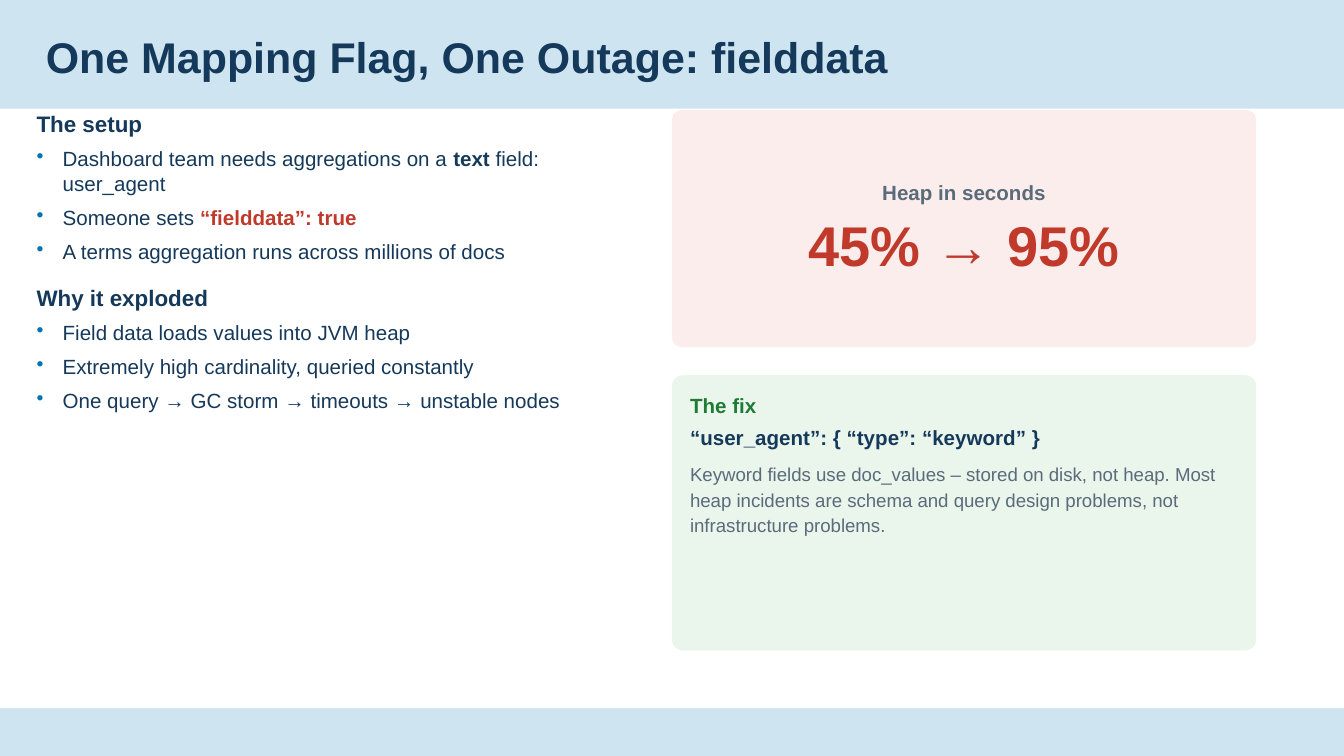
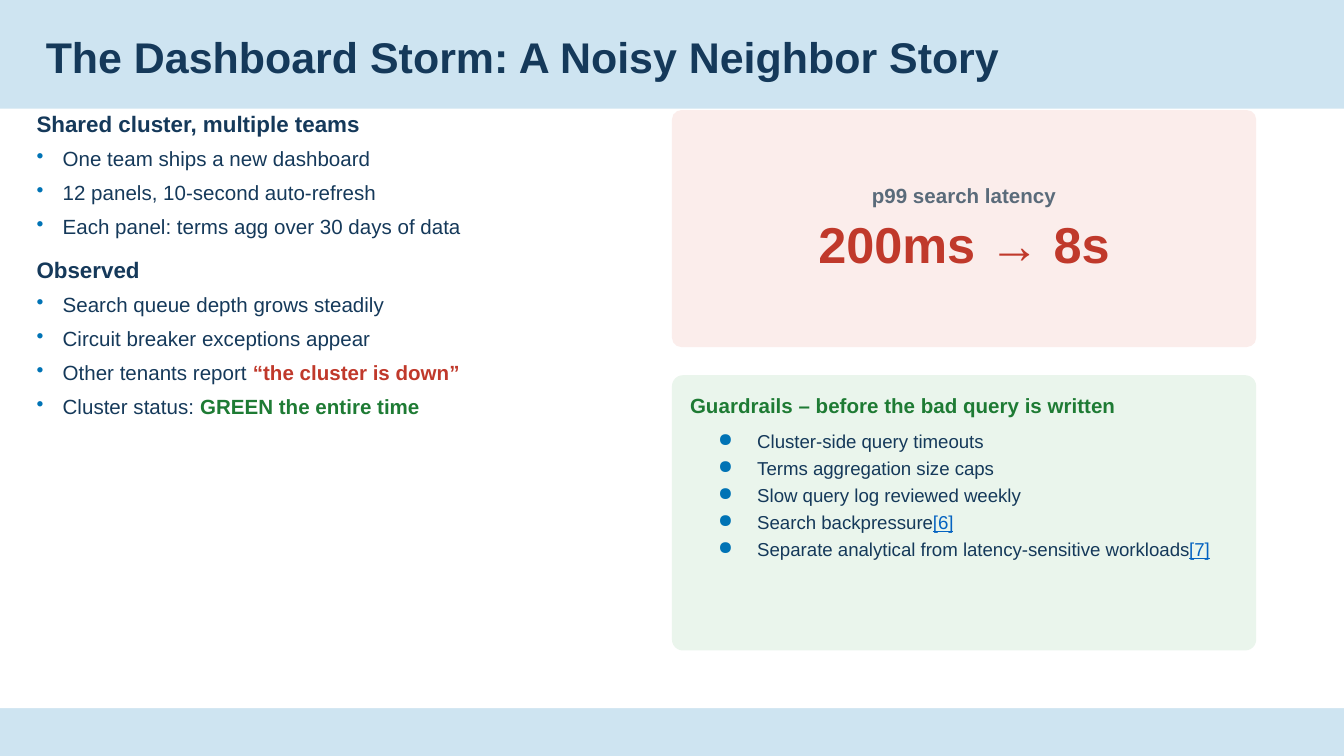
import pptx
import pptx.util
import pptx.dml.color
import pptx.enum.shapes
import pptx.enum.text
import pptx.oxml
import pptx.oxml.ns

Pt = pptx.util.Pt
RGB = pptx.dml.color.RGBColor
SHAPE = pptx.enum.shapes.MSO_SHAPE
ALIGN = pptx.enum.text.PP_ALIGN
ANCHOR = pptx.enum.text.MSO_ANCHOR

FONT = "Arial"
SKY = RGB(0xCE, 0xE4, 0xF1)
WHITE = RGB(0xFF, 0xFF, 0xFF)
NAVY = RGB(0x15, 0x39, 0x5A)
BLUE = RGB(0x00, 0x73, 0xB5)
RED = RGB(0xC0, 0x39, 0x2B)
GREEN = RGB(0x1E, 0x7B, 0x34)
GREY = RGB(0x5A, 0x6B, 0x7A)
LINK = RGB(0x05, 0x63, 0xC1)
ROSE = RGB(0xFB, 0xED, 0xEB)
MINT = RGB(0xEA, 0xF5, 0xEC)

# A line is a string or a list of runs; a run is a string or (text, format).
STRONG = {"bold": True}
ALERT = {"bold": True, "color": RED}
CALM = {"bold": True, "color": GREEN}
CITE = {"color": LINK, "line": True}

SLIDES = [
    {
        "title": "One Mapping Flag, One Outage: fielddata",
        "gap": 11,
        "story": [
            ("The setup", [
                ["Dashboard team needs aggregations on a ", ("text", STRONG),
                 " field: user_agent"],
                ["Someone sets ", ("“fielddata”: true", ALERT)],
                "A terms aggregation runs across millions of docs",
            ]),
            ("Why it exploded", [
                "Field data loads values into JVM heap",
                "Extremely high cardinality, queried constantly",
                "One query → GC storm → timeouts → unstable nodes",
            ]),
        ],
        "metric": ("Heap in seconds", "45% → 95%", 30),
        "remedy": "The fix",
        "code": "“user_agent”: { “type”: “keyword” }",
        "note": "Keyword fields use doc_values – stored on disk, not heap. "
                "Most heap incidents are schema and query design problems, "
                "not infrastructure problems.",
    },
    {
        "title": "The Dashboard Storm: A Noisy Neighbor Story",
        "gap": 9,
        "story": [
            ("Shared cluster, multiple teams", [
                "One team ships a new dashboard",
                "12 panels, 10-second auto-refresh",
                "Each panel: terms agg over 30 days of data",
            ]),
            ("Observed", [
                "Search queue depth grows steadily",
                "Circuit breaker exceptions appear",
                ["Other tenants report ", ("“the cluster is down”", ALERT)],
                ["Cluster status: ", ("GREEN the entire time", CALM)],
            ]),
        ],
        "metric": ("p99 search latency", "200ms → 8s", 27),
        "remedy": "Guardrails – before the bad query is written",
        "rules": [
            "Cluster-side query timeouts",
            "Terms aggregation size caps",
            "Slow query log reviewed weekly",
            ["Search backpressure", ("[6]", CITE)],
            ["Separate analytical from latency-sensitive workloads",
             ("[7]", CITE)],
        ],
    },
]

WIDE, HIGH = 720, 405
BODY = (0, 58.2, WIDE, 321.2)
TITLE = (19.6, 16.6, 640, 24)
LEFT = (19.6, 59, 319, 289.5)
TOP = (360, 59, 313, 127)
LOW = (360, 201, 313, 147.5)


def set_bullet(para, mark, margin, hang):
    props = para._p.get_or_add_pPr()
    props.set("marL", str(Pt(margin)))
    props.set("indent", str(-Pt(hang)))
    space = pptx.oxml.ns.nsdecls("a")
    for xml in (f'<a:buClr {space}><a:srgbClr val="{BLUE}"/></a:buClr>',
                f'<a:buChar {space} char="{mark}"/>'):
        props.append(pptx.oxml.parse_xml(xml))


def write(frame, text, size=11, color=NAVY, bold=False, before=0,
          spacing=None, align=ALIGN.LEFT, bullet=None):
    """Put one paragraph into the frame, filling its empty first one first."""
    para = frame.paragraphs[0]
    if para.runs:
        para = frame.add_paragraph()
    if bullet:
        set_bullet(para, *bullet)
    para.alignment = align
    para.space_before = Pt(before)
    if spacing:
        para.line_spacing = spacing
    for part in [text] if isinstance(text, str) else text:
        words, look = (part, {}) if isinstance(part, str) else part
        run = para.add_run()
        run.text = words
        font = run.font
        font.name, font.size = FONT, Pt(size)
        font.bold = look.get("bold", bold)
        font.color.rgb = look.get("color", color)
        if look.get("line"):
            font.underline = True


def set_frame(shape, across=0, down=0, anchor=ANCHOR.TOP):
    frame = shape.text_frame
    frame.word_wrap = True
    frame.vertical_anchor = anchor
    frame.margin_left = frame.margin_right = Pt(across)
    frame.margin_top = frame.margin_bottom = Pt(down)
    return frame


def add_box(slide, place, **inset):
    shape = slide.shapes.add_textbox(*map(Pt, place))
    return set_frame(shape, **inset)


def add_panel(slide, kind, place, fill):
    shape = slide.shapes.add_shape(kind, *map(Pt, place))
    shape.shadow.inherit = False
    shape.fill.solid()
    shape.fill.fore_color.rgb = fill
    shape.line.fill.background()
    return shape


def add_card(slide, place, fill, anchor=ANCHOR.TOP):
    shape = add_panel(slide, SHAPE.ROUNDED_RECTANGLE, place, fill)
    shape.adjustments[0] = 0.04
    return set_frame(shape, 8, 8, anchor)


def add_story(slide, data):
    frame = add_box(slide, LEFT)
    for index, (head, points) in enumerate(data["story"]):
        write(frame, head, size=12, bold=True,
              before=data["gap"] if index else 0)
        for point in points:
            write(frame, point, before=5, bullet=("•", 14, 14))


def add_metric(slide, label, value, size):
    frame = add_card(slide, TOP, ROSE, ANCHOR.MIDDLE)
    write(frame, label, color=GREY, bold=True, align=ALIGN.CENTER)
    write(frame, value, size=size, color=RED, bold=True, before=3,
          align=ALIGN.CENTER)


def add_remedy(slide, data):
    frame = add_card(slide, LOW, MINT)
    write(frame, data["remedy"], color=GREEN, bold=True)
    if "code" in data:
        write(frame, data["code"], bold=True, before=4)
        write(frame, data["note"], size=10, color=GREY, before=5,
              spacing=1.15)
    for index, rule in enumerate(data.get("rules", [])):
        write(frame, rule, size=10, before=0 if index else 4, spacing=1.2,
              bullet=("●", 36, 21))


def build(deck, data):
    slide = deck.slides.add_slide(deck.slide_layouts[6])
    add_panel(slide, SHAPE.RECTANGLE, BODY, WHITE)
    write(add_box(slide, TITLE, across=5, down=3), data["title"],
          size=23, bold=True, spacing=0.9)
    add_story(slide, data)
    add_metric(slide, *data["metric"])
    add_remedy(slide, data)


def main():
    deck = pptx.Presentation()
    deck.slide_width, deck.slide_height = Pt(WIDE), Pt(HIGH)
    back = deck.slide_master.background.fill
    back.solid()
    back.fore_color.rgb = SKY
    for data in SLIDES:
        build(deck, data)
    deck.save("out.pptx")


if __name__ == "__main__":
    main()
